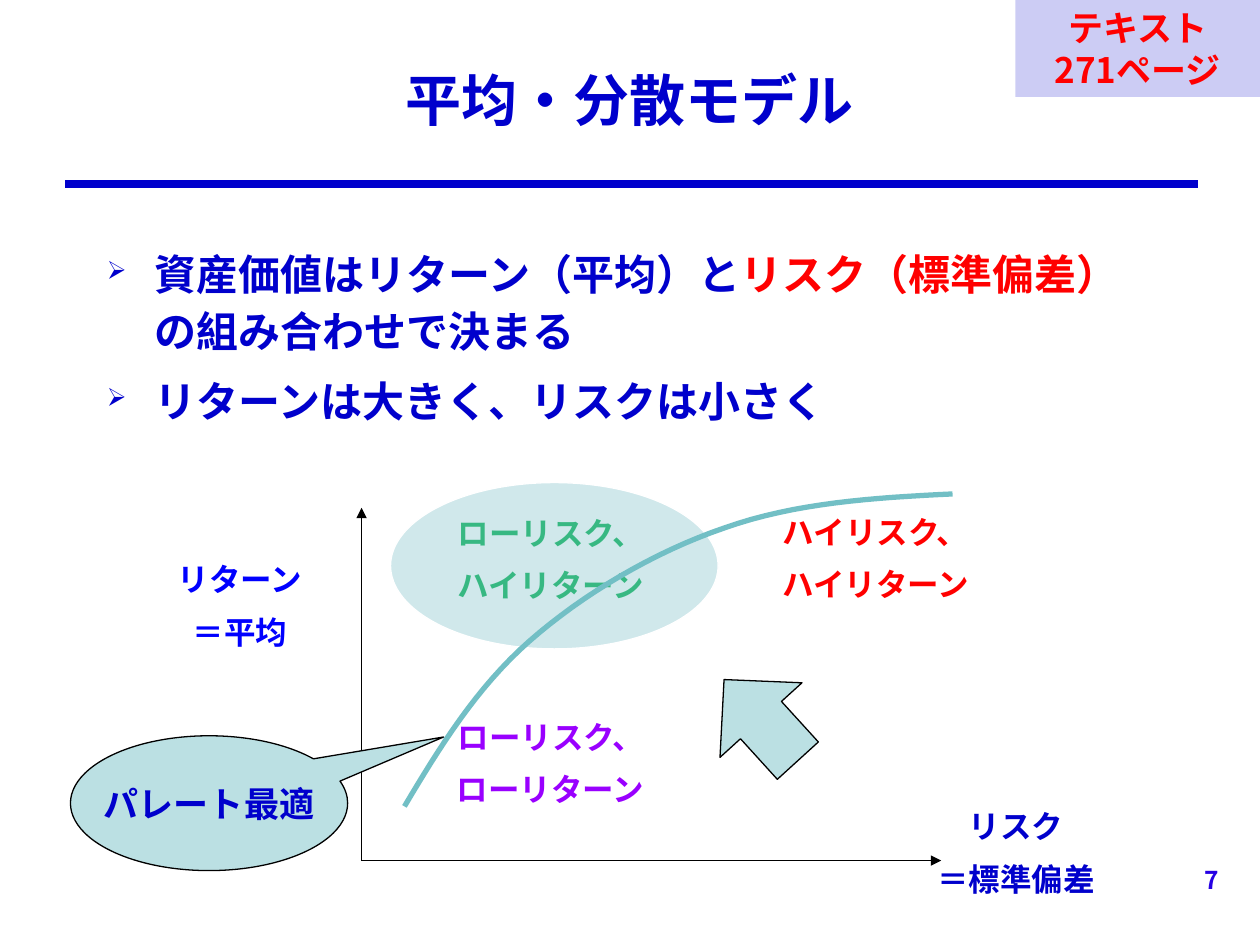
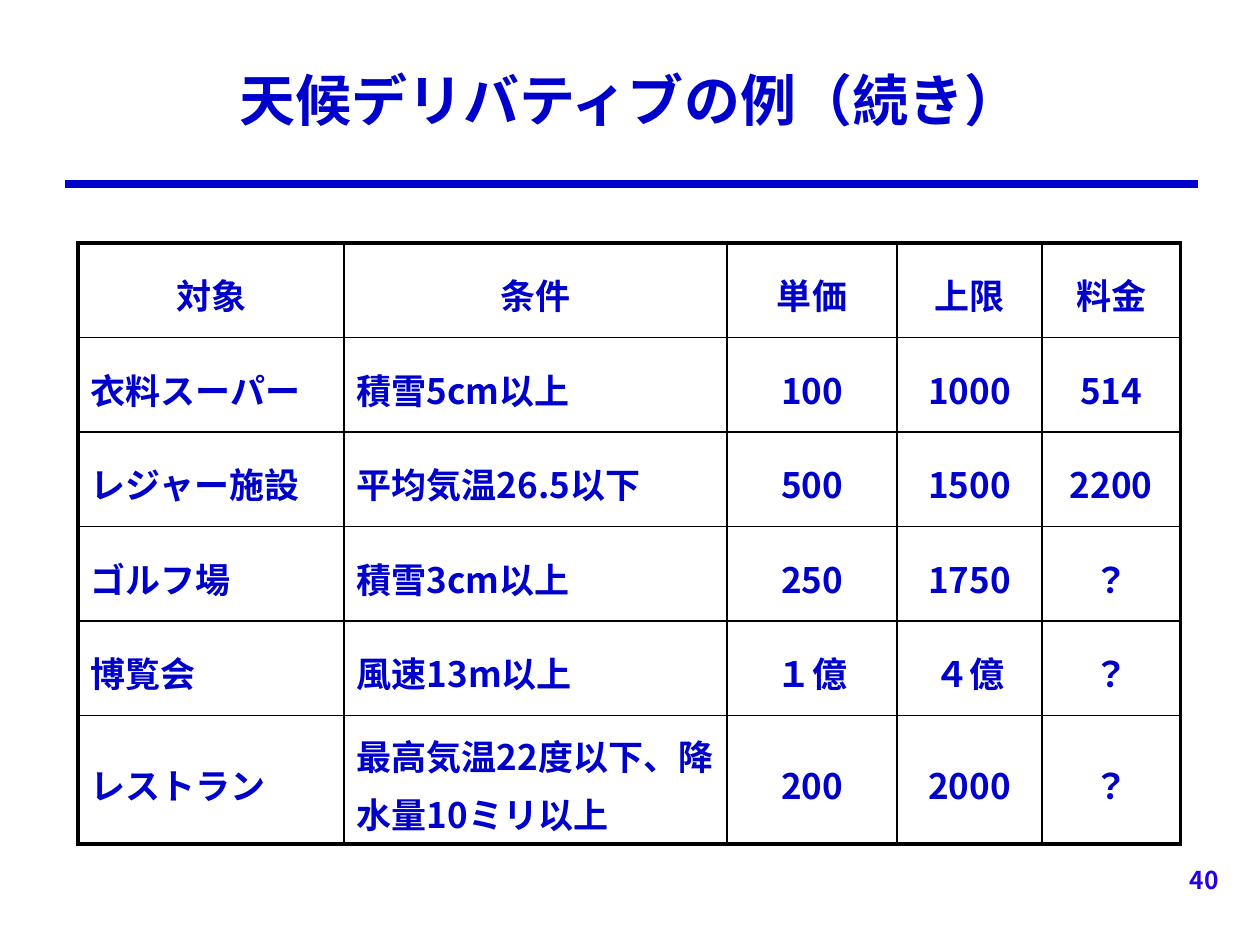
"""Build two finance lecture slides: a mean-variance diagram and a weather derivative table."""
from dataclasses import dataclass

from lxml import etree
from pptx import Presentation
from pptx.dml.color import RGBColor
from pptx.enum.shapes import MSO_CONNECTOR, MSO_SHAPE
from pptx.enum.text import MSO_ANCHOR, PP_ALIGN
from pptx.oxml.ns import qn
from pptx.util import Inches, Pt

LEFT, CENTER, RIGHT = PP_ALIGN.LEFT, PP_ALIGN.CENTER, PP_ALIGN.RIGHT
TOP, MIDDLE = MSO_ANCHOR.TOP, MSO_ANCHOR.MIDDLE
STRAIGHT = MSO_CONNECTOR.STRAIGHT
RECT, ELLIPSE = MSO_SHAPE.RECTANGLE, MSO_SHAPE.OVAL
UP_ARROW, CALLOUT = MSO_SHAPE.UP_ARROW, MSO_SHAPE.OVAL_CALLOUT


@dataclass(frozen=True)
class Theme:
    font: str = "Noto Sans CJK JP"
    label_font: str = "Arial"
    navy: str = "0000CC"
    blue: str = "0000FF"
    red: str = "FF0000"
    green: str = "00B050"
    purple: str = "9900FF"
    number: str = "2600E4"
    black: str = "000000"
    white: str = "FFFFFF"
    pale: str = "BBE0E3"
    teal: str = "8AC6CD"
    curve: str = "72BFC5"
    title_size: int = 32
    body_size: int = 24
    note_size: int = 20
    label_size: int = 18
    number_size: int = 14


THEME = Theme()


def rgb(color):
    return RGBColor.from_string(color)


def box(*lengths):
    return [Inches(v) for v in lengths]


def put_text(tf, paragraphs, size, color=THEME.navy, font=THEME.font, align=LEFT,
             anchor=TOP, line=None, before=0, bullet=None, wrap=True):
    tf.word_wrap = wrap
    tf.vertical_anchor = anchor
    for i, runs in enumerate(paragraphs):
        p = tf.add_paragraph() if i else tf.paragraphs[0]
        p.alignment = align
        if line:
            p.line_spacing = line
        if i and before:
            p.space_before = Pt(before)
        if bullet:
            add_bullet(p, bullet)
        for text, run_color in [(runs, color)] if isinstance(runs, str) else runs:
            r = p.add_run()
            r.text = text
            r.font.size, r.font.bold, r.font.name = Pt(size), True, font
            r.font.color.rgb = rgb(run_color)
            etree.SubElement(r.font._element, qn("a:ea"), typeface=THEME.font)


def add_bullet(p, char):
    pPr = p._p.get_or_add_pPr()
    pPr.set("marL", str(Inches(0.38)))
    pPr.set("indent", str(Inches(-0.38)))
    etree.SubElement(pPr, qn("a:buSzPct"), val="60000")
    etree.SubElement(pPr, qn("a:buChar"), char=char)


def set_border(cell, widths):
    tcPr = cell._tc.get_or_add_tcPr()
    for i, (side, width) in enumerate(zip("LRTB", widths)):
        ln = etree.Element(qn(f"a:ln{side}"), w=str(Pt(width)))
        fill = etree.SubElement(ln, qn("a:solidFill"))
        etree.SubElement(fill, qn("a:srgbClr"), val=THEME.black)
        tcPr.insert(i, ln)


def bezier(start, *segments, steps=16):
    points = [start]
    for c1, c2, end in segments:
        for k in range(1, steps + 1):
            t = k / steps
            weights = (1 - t) ** 3, 3 * t * (1 - t) ** 2, 3 * t * t * (1 - t), t ** 3
            corners = start, c1, c2, end
            points.append(tuple(sum(w * c[a] for w, c in zip(weights, corners))
                                for a in (0, 1)))
        start = end
    return points


class Deck:
    """Holds the theme and the slide being drawn."""

    def __init__(self, theme):
        self.theme = theme
        self.prs = Presentation()
        self.prs.slide_width, self.prs.slide_height = box(10, 7.5)
        self.s = None

    def slide(self, title, number):
        t = self.theme
        self.s = self.prs.slides.add_slide(self.prs.slide_layouts[6])
        self.line((0.52, 1.46), (9.51, 1.46), t.navy, 4.5)
        self.text((9.04, 6.8, 0.73, 0.5), [str(number)], size=t.number_size,
                  color=t.number, align=RIGHT, line=Pt(18))
        self.text((0.75, 0.25, 8.5, 1.08), [title], size=t.title_size,
                  align=CENTER, anchor=MIDDLE)

    def text(self, at, paragraphs, top=0.05, **fmt):
        tf = self.s.shapes.add_textbox(*box(*at)).text_frame
        tf.margin_top = Inches(top)
        put_text(tf, paragraphs, **fmt)

    def label(self, at, lines, color):
        t = self.theme
        self.text(at, lines, size=t.label_size, color=color, font=t.label_font,
                  align=CENTER, line=Pt(23), before=7)

    def line(self, start, end, color, width, arrow=False):
        c = self.s.shapes.add_connector(STRAIGHT, *box(*start, *end))
        c.line.color.rgb, c.line.width = rgb(color), Pt(width)
        if arrow:
            etree.SubElement(c.line._get_or_add_ln(), qn("a:tailEnd"), type="triangle")
        etree.SubElement(c._element.spPr, qn("a:effectLst"))

    def shape(self, kind, at, fill, alpha=None, line=None, rotation=0, adjust=()):
        sp = self.s.shapes.add_shape(kind, *box(*at))
        sp.shadow.inherit = False
        sp.rotation = rotation
        for i, value in enumerate(adjust):
            sp.adjustments[i] = value
        sp.fill.solid()
        sp.fill.fore_color.rgb = rgb(fill)
        if alpha:
            clr = sp._element.spPr.find(qn("a:solidFill"))[0]
            etree.SubElement(clr, qn("a:alpha"), val=str(alpha * 1000))
        if line:
            sp.line.color.rgb, sp.line.width = rgb(line), Pt(0.75)
        else:
            sp.line.fill.background()
        return sp.text_frame

    def curve(self, points, color, width):
        (x, y), *rest = [box(*point) for point in points]
        builder = self.s.shapes.build_freeform(x, y)
        builder.add_line_segments(rest, close=False)
        sp = builder.convert_to_shape()
        sp.shadow.inherit = False
        sp.fill.background()
        sp.line.color.rgb, sp.line.width = rgb(color), Pt(width)

    def table(self, at, widths, heights, rows, left_columns):
        table = self.s.shapes.add_table(len(rows), len(widths), *box(*at)).table
        table.first_row = table.horz_banding = False
        for column, width in zip(table.columns, widths):
            column.width = Inches(width)
        for row, height in zip(table.rows, heights):
            row.height = Inches(height)
        last_i, last_j = len(rows) - 1, len(widths) - 1
        for i, row in enumerate(rows):
            for j, value in enumerate(row):
                cell = table.cell(i, j)
                cell.fill.background()
                cell.vertical_anchor = MIDDLE
                align = LEFT if i and j in left_columns else CENTER
                put_text(cell.text_frame, [value], size=self.theme.note_size,
                         align=align, anchor=None, line=1.15, wrap=None)
                edges = j == 0, j == last_j, i == 0, i == last_i
                set_border(cell, [2.25 if edge else 1 for edge in edges])


def mean_variance_slide(deck):
    t = deck.theme
    deck.slide("平均・分散モデル", 7)
    deck.text((0.75, 1.83, 8.5, 4.83), [
        [("資産価値はリターン（平均）と", t.navy), ("リスク（標準偏差）", t.red),
         ("の組み合わせで決まる", t.navy)],
        "リターンは大きく、リスクは小さく",
    ], top=0.09, size=t.body_size, line=Pt(32.6), before=7.4, bullet="➢")

    origin = (2.87, 6.83)
    for end in ((7.47, 6.83), (2.87, 4.03)):
        deck.line(origin, end, t.black, 0.75, arrow=True)
    for at, lines, color in (
        ((1.05, 4.38, 1.71, 0.86), ("リターン", "＝平均"), t.blue),
        ((7.13, 6.34, 1.87, 0.86), ("リスク", "＝標準偏差"), t.navy),
        ((5.7, 4, 2.5, 0.86), ("ハイリスク、", "ハイリターン"), t.red),
        ((3.12, 4.01, 2.5, 0.86), ("ローリスク、", "ハイリターン"), t.green),
        ((3.12, 5.63, 2.5, 0.86), ("ローリスク、", "ローリターン"), t.purple),
    ):
        deck.label(at, lines, color)

    deck.shape(ELLIPSE, (3.1, 3.83, 2.6, 1.32), t.teal, alpha=40, line=t.white)
    deck.shape(UP_ARROW, (5.6, 5.28, 0.88, 0.87), t.pale, line=t.black, rotation=317.7)
    frontier = bezier((3.21, 6.4),
                      ((3.49, 5.93), (3.78, 5.46), (4.2, 5.09)),
                      ((4.62, 4.72), (5.19, 4.38), (5.75, 4.19)),
                      ((6.31, 3.99), (6.94, 3.95), (7.56, 3.92)))
    deck.curve(frontier, t.curve, 3)
    pareto = deck.shape(CALLOUT, (0.56, 5.84, 2.2, 1.07), t.pale, line=t.black,
                        adjust=(0.846, -0.491))
    put_text(pareto, ["パレート最適"], size=t.note_size, align=CENTER,
             anchor=MIDDLE, wrap=False)
    page_tag = deck.shape(RECT, (8.06, 0, 1.94, 0.77), t.navy, alpha=20)
    put_text(page_tag, ["テキスト", "271ページ"], size=t.note_size, color=t.red,
             align=CENTER, line=Pt(24))


def weather_slide(deck):
    deck.slide("天候デリバティブの例（続き）", 40)
    rows = [
        ("対象", "条件", "単価", "上限", "料金"),
        ("衣料スーパー", "積雪5cm以上", "100", "1000", "514"),
        ("レジャー施設", "平均気温26.5以下", "500", "1500", "2200"),
        ("ゴルフ場", "積雪3cm以上", "250", "1750", "？"),
        ("博覧会", "風速13m以上", "１億", "４億", "？"),
        ("レストラン", "最高気温22度以下、降水量10ミリ以上", "200", "2000", "？"),
    ]
    deck.table((0.62, 1.93, 8.76, 4.77), (2.11, 3.04, 1.35, 1.15, 1.1),
               [0.75] * 5 + [1.02], rows, left_columns=(0, 1))


def main():
    deck = Deck(THEME)
    mean_variance_slide(deck)
    weather_slide(deck)
    deck.prs.save("out.pptx")


if __name__ == "__main__":
    main()
